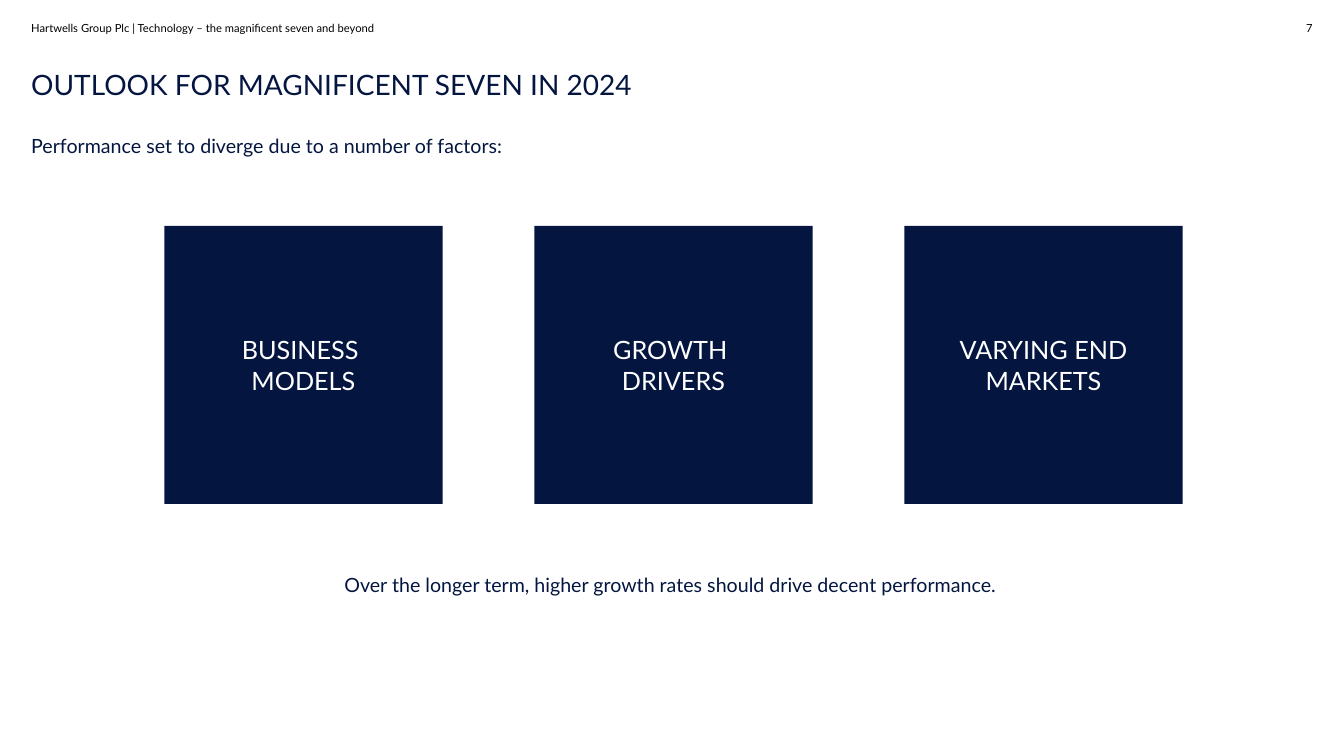
from pptx import Presentation
from pptx.dml.color import RGBColor
from pptx.enum import shapes, text
from pptx.util import Inches, Pt

COLOURS = {"navy": "041640", "black": "000000", "white": "FFFFFF"}
FONT = "Lato"
LEFT, CENTRE, RIGHT = text.PP_ALIGN.LEFT, text.PP_ALIGN.CENTER, text.PP_ALIGN.RIGHT
FACTORS = ["BUSINESS \vMODELS", "GROWTH \vDRIVERS", "VARYING END MARKETS"]
TILE_LEFT, TILE_TOP, TILE_SIZE, TILE_PITCH = 1.63, 2.24, 2.76, 3.67


def write(shape, words, size, colour, align):
    """Put one formatted paragraph into a shape and return it."""
    frame = shape.text_frame
    frame.text = words
    frame.word_wrap = True
    para = frame.paragraphs[0]
    para.alignment = align
    for span in para.runs:
        span.font.name = FONT
        span.font.size = Pt(size)
        span.font.color.rgb = RGBColor.from_string(COLOURS[colour])
    return para


def add_label(page, place, words, size, colour="navy", align=LEFT, spacing=1.02):
    """Add a text box without margins."""
    box = page.shapes.add_textbox(*map(Inches, place))
    frame = box.text_frame
    frame.margin_left = frame.margin_right = frame.margin_top = frame.margin_bottom = 0
    write(box, words, size, colour, align).line_spacing = spacing


def add_tile(page, left, words):
    """Add a navy square with a centred caption."""
    tile = page.shapes.add_shape(
        shapes.MSO_SHAPE.RECTANGLE, Inches(left), Inches(TILE_TOP), Inches(TILE_SIZE), Inches(TILE_SIZE))
    tile.shadow.inherit = False
    tile.fill.solid()
    tile.fill.fore_color.rgb = RGBColor.from_string(COLOURS["navy"])
    tile.line.fill.background()
    tile.text_frame.vertical_anchor = text.MSO_ANCHOR.MIDDLE
    write(tile, words, 18, "white", CENTRE)


def main():
    """Build the outlook slide and save it."""
    deck = Presentation()
    deck.slide_width, deck.slide_height = Inches(13.33), Inches(7.5)
    page = deck.slides.add_slide(deck.slide_layouts[6])
    add_label(page, (0.31, 0.22, 8.37, 0.13),
              "Hartwells Group Plc | Technology – the magnificent seven and beyond", 8, "black", spacing=0.98)
    add_label(page, (12.25, 0.22, 0.77, 0.13), "7", 8, "black", RIGHT, 0.98)
    add_label(page, (0.31, 0.7, 8.37, 0.31), "OUTLOOK FOR MAGNIFICENT SEVEN IN 2024", 20, spacing=0.92)
    add_label(page, (0.31, 1.32, 8.37, 0.24), "Performance set to diverge due to a number of factors:", 14)
    for index, factor in enumerate(FACTORS):
        add_tile(page, TILE_LEFT + index * TILE_PITCH, factor)
    add_label(page, (1.63, 5.68, 10.09, 0.23),
              "Over the longer term, higher growth rates should drive decent performance. ", 14, align=CENTRE)
    deck.save("out.pptx")


if __name__ == "__main__":
    main()
